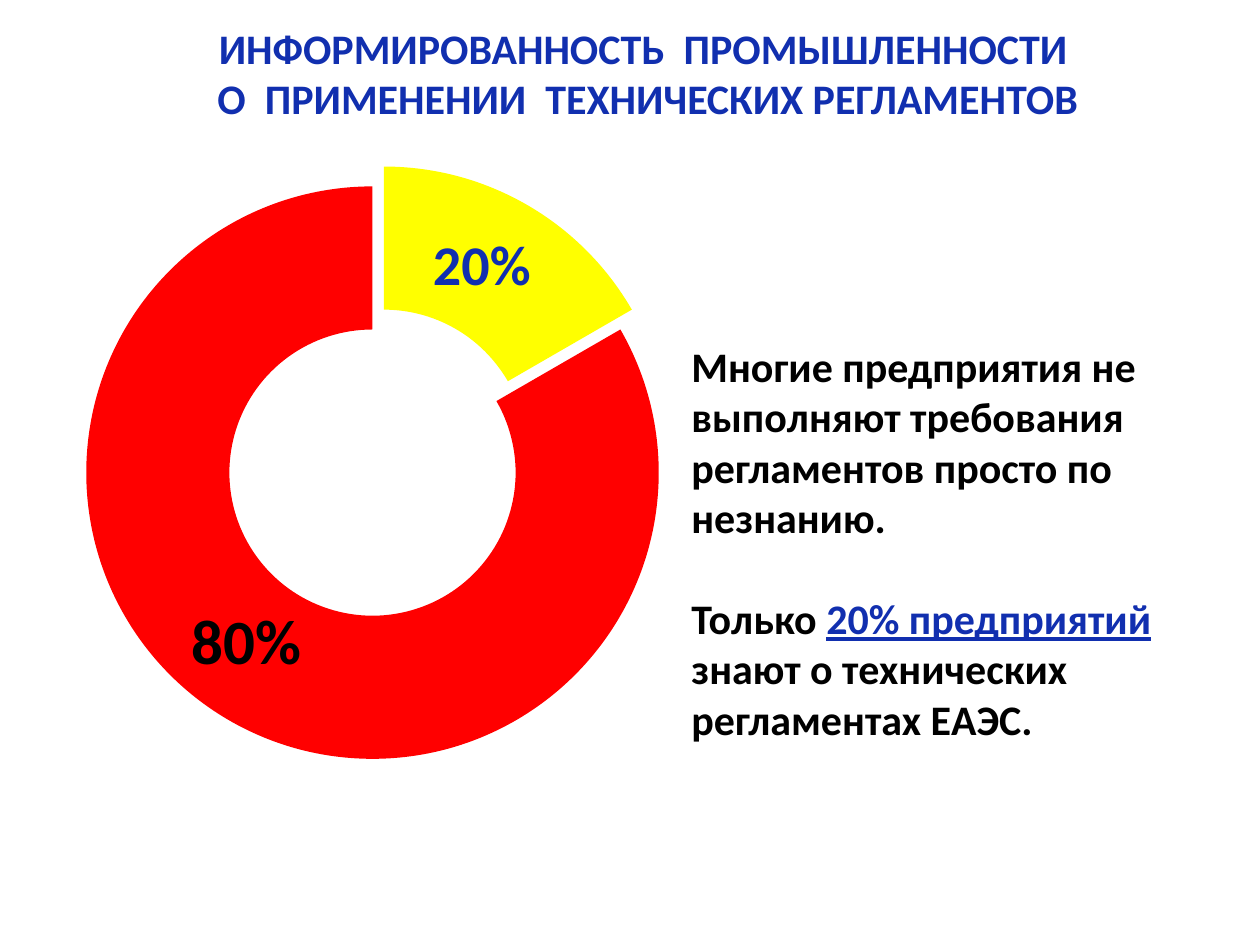
from dataclasses import dataclass

from lxml import etree
from pptx import Presentation
from pptx import util as u
from pptx.chart.data import CategoryChartData
from pptx.dml.color import RGBColor
from pptx.enum import chart as ch, text as tx
from pptx.oxml import parse_xml
from pptx.oxml.ns import qn

PX = 914400 // 126  # one px in EMU
FONT = "Calibri"
SPACE = "http://schemas.openxmlformats.org/drawingml/2006/chart"
HUES = {"ink": "000000", "blue": "112FAF", "gold": "FFFF00", "red": "FF0000"}


@dataclass
class Run:
    text: str
    hue: str = "ink"
    line: bool = False


@dataclass
class Slice:
    value: float
    label: str
    fill: str
    hue: str
    size: int
    burst: int
    shift: dict[str, float]  # label offset, as a share of the chart


TITLE = [
    [Run("ИНФОРМИРОВАННОСТЬ  ПРОМЫШЛЕННОСТИ ", "blue")],
    [Run("О  ПРИМЕНЕНИИ  ТЕХНИЧЕСКИХ РЕГЛАМЕНТОВ", "blue")],
]
NOTES = [
    [Run("Многие предприятия не выполняют требования регламентов просто по незнанию.")],
    [Run("Только "), Run("20% предприятий ", "blue", True),
     Run("знают о технических регламентах ЕАЭС.")],
]
SLICES = [
    Slice(0.2, "20%", "gold", "blue", 32, 4, {"x": -0.01, "y": 0}),
    Slice(1, "80%", "red", "ink", 36, 12, {"x": -0.02, "y": -0.02}),
]
PLOT = {"x": 0.08, "y": 0.05, "w": 0.63, "h": 0.76}


def rgb(hue: str) -> RGBColor:
    return RGBColor.from_string(HUES[hue])


def style(font, hue: str, size: int) -> None:
    font.name, font.size, font.bold = FONT, u.Pt(size), True
    font.color.rgb = rgb(hue)


def box(x: int, y: int, w: int, h: int) -> list[int]:
    return [n * PX for n in (x, y, w, h)]


def write(frame, paras: list[list[Run]], align, gap: int = 0) -> None:
    """Fill a text frame with 24 pt bold runs, gap points between paragraphs."""
    frame.word_wrap = True
    frame.auto_size = tx.MSO_AUTO_SIZE.NONE
    frame.vertical_anchor = tx.MSO_ANCHOR.TOP
    for i, runs in enumerate(paras):
        para = frame.add_paragraph() if i else frame.paragraphs[0]
        para.alignment = align
        para.line_spacing = 1.0
        para.space_before = u.Pt(gap if i else 0)
        for item in runs:
            run = para.add_run()
            run.text = item.text
            style(run.font, item.hue, 24)
            run.font.underline = item.line


def drop(node, tag: str) -> None:
    for old in node.findall(qn(tag)):
        node.remove(old)


def place(node, at: int, sizes: dict[str, float], modes: str = "") -> None:
    """Give a chart part a manual layout as its child number at."""
    drop(node, "c:layout")
    marks = "".join(f'<c:{k} val="{v}"/>' for k, v in sizes.items())
    node.insert(at, parse_xml(
        f'<c:layout xmlns:c="{SPACE}"><c:manualLayout>{modes}{marks}'
        "</c:manualLayout></c:layout>"))


def ring(slide, parts: list[Slice]) -> None:
    """Draw the doughnut with coloured, pulled-apart slices."""
    data = CategoryChartData()
    data.categories = [""] * len(parts)
    data.add_series("Series 1", [p.value for p in parts])
    chart = slide.shapes.add_chart(
        ch.XL_CHART_TYPE.DOUGHNUT, *box(15, 125, 927, 774), data).chart
    chart.has_legend = chart.has_title = False
    chart.font.name, chart.font.size = FONT, u.Pt(18)
    chart.font.color.rgb = rgb("ink")
    plot = chart.plots[0]
    plot.vary_by_categories = True
    series = plot.series[0]
    labels = series.data_labels
    labels.show_value = labels.show_category_name = True
    labels.font.size = u.Pt(24)

    for i, part in enumerate(parts):
        point = series.points[i]
        point.format.fill.solid()
        point.format.fill.fore_color.rgb = rgb(part.fill)
        point.format.line.fill.background()
        run = point.data_label.text_frame.paragraphs[0].add_run()
        run.text = part.label
        style(run.font, part.hue, part.size)

    # Explosion and label offsets
    root = chart.element
    ser = root.find(".//" + qn("c:ser"))
    drop(ser, "c:explosion")
    dots, tags = ser.findall(qn("c:dPt")), ser.findall(".//" + qn("c:dLbl"))
    dots[0].addprevious(etree.Element(qn("c:explosion"), val="4"))
    for part, dot, tag in zip(parts, dots, tags):
        burst = etree.Element(qn("c:explosion"), val=str(part.burst))
        dot.find(qn("c:spPr")).addprevious(burst)
        place(tag, 1, part.shift)

    # Unnamed categories, hole and plot area
    for cache in root.iterfind(".//" + qn("c:cat") + "//" + qn("c:strCache")):
        drop(cache, "c:pt")
    root.find(".//" + qn("c:holeSize")).set("val", "50")
    modes = '<c:layoutTarget val="inner"/><c:xMode val="edge"/><c:yMode val="edge"/>'
    place(root.find(".//" + qn("c:plotArea")), 0, PLOT, modes)


def main() -> None:
    deck = Presentation()
    deck.slide_width, deck.slide_height = u.Inches(10), u.Inches(7.5)
    slide = deck.slides.add_slide(deck.slide_layouts[5])

    # Chart
    ring(slide, SLICES)

    # Comment
    note = slide.shapes.add_textbox(*box(679, 334, 556, 471))
    write(note.text_frame, NOTES, tx.PP_ALIGN.LEFT, gap=29)

    # Title
    head = slide.shapes.title
    head.left, head.top, head.width, head.height = box(122, 16, 1052, 115)
    write(head.text_frame, TITLE, tx.PP_ALIGN.CENTER)

    deck.save("out.pptx")


if __name__ == "__main__":
    main()
